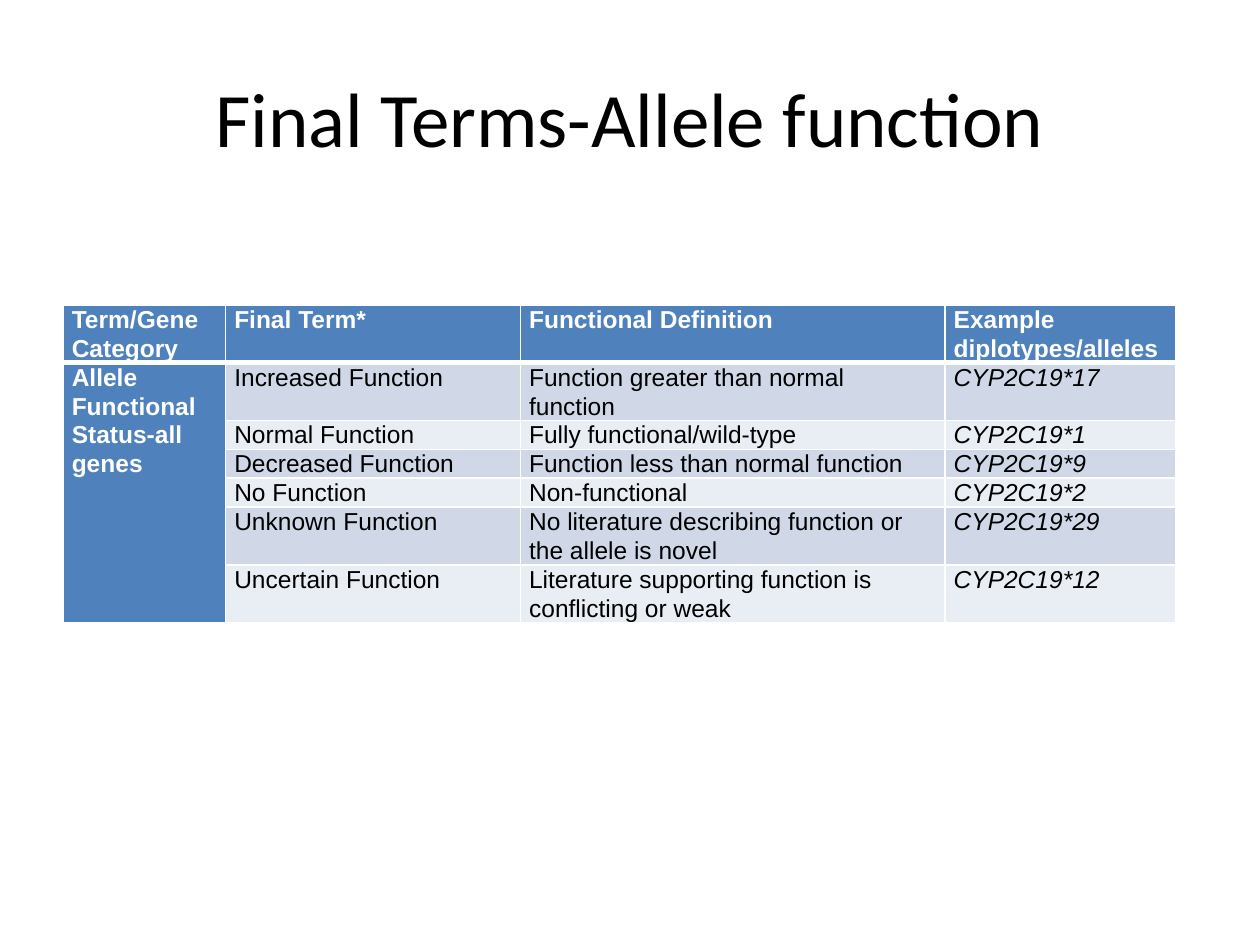
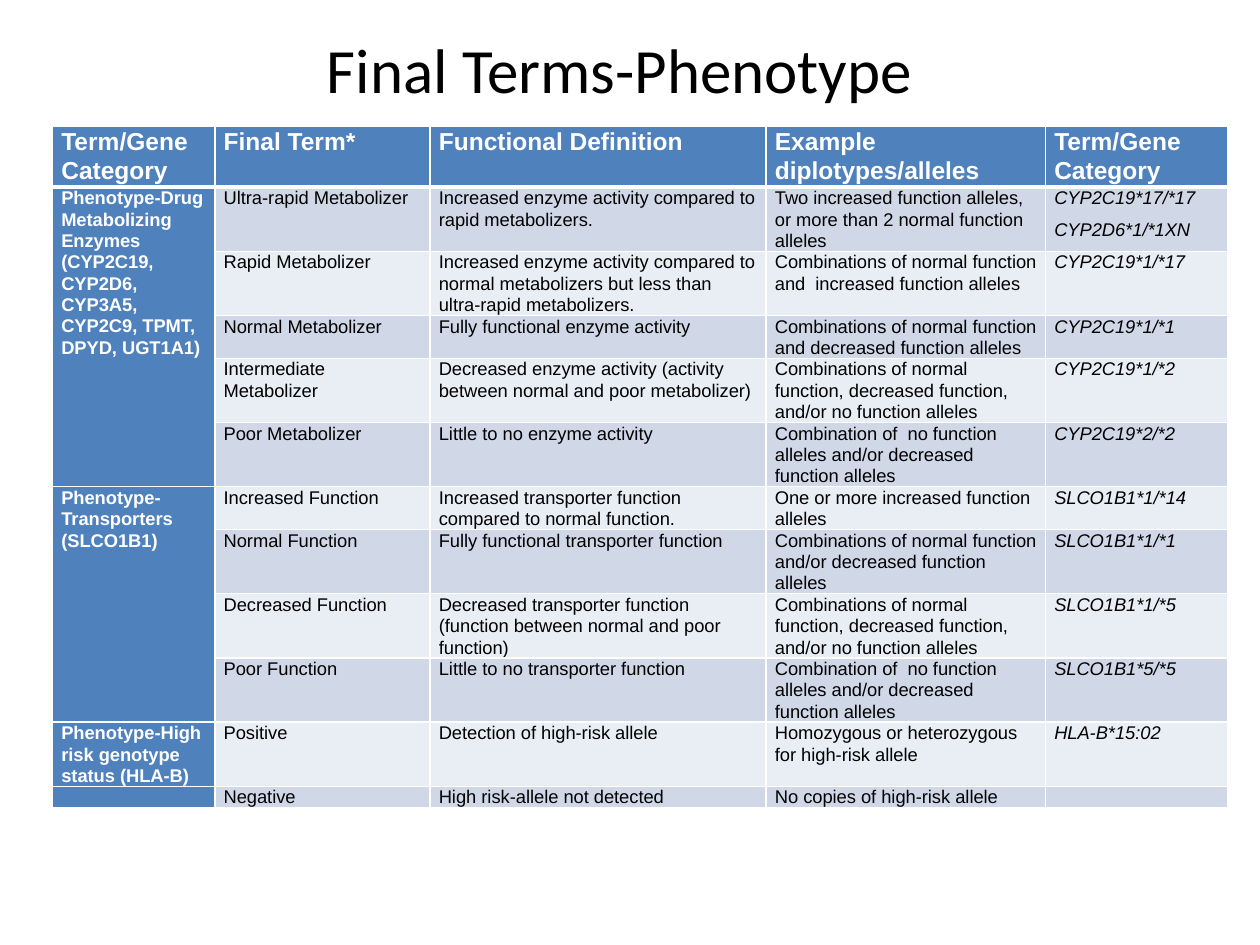
from lxml.etree import SubElement as Sub
from pptx import Presentation
from pptx.dml.color import RGBColor as Color
from pptx.enum.text import MSO_ANCHOR as Anchor, PP_ALIGN as Align
from pptx.oxml.ns import qn
from pptx.util import Inches, Pt

WIDE, HIGH = Inches(10), Inches(7.5)
LINE = Inches(0.16)
LEFT, RIGHT = Inches(0.07), Inches(0.06)
BLUE, WHITE, BLACK = "4F81BD", "FFFFFF", "000000"
BANDS = "D0D8E8", "E9EDF4"
HEADS = ["Term/Gene Category", "Final Term*", "Functional Definition",
         "Example diplotypes/alleles"]

ALLELES = [
    ("Allele Functional Status-all genes", [
        ("Increased Function", "Function greater than normal function", "CYP2C19*17"),
        ("Normal Function", "Fully functional/wild-type", "CYP2C19*1"),
        ("Decreased Function", "Function less than normal function", "CYP2C19*9"),
        ("No Function", "Non-functional", "CYP2C19*2"),
        ("Unknown Function", "No literature describing function or the allele is novel",
         "CYP2C19*29"),
        ("Uncertain Function", "Literature supporting function is conflicting or weak",
         "CYP2C19*12"),
    ]),
]

MIXED = "Combinations of normal function, decreased function, and/or no function alleles"
POOR = "Combination of  no function alleles and/or decreased function alleles"
TYPES = [
    ("Phenotype-Drug Metabolizing Enzymes "
     "(CYP2C19, CYP2D6, CYP3A5, CYP2C9, TPMT, DPYD, UGT1A1)", [
        ("Ultra-rapid Metabolizer",
         "Increased enzyme activity compared to rapid metabolizers.",
         "Two increased function alleles, or more than 2 normal function alleles",
         "CYP2C19*17/*17\nCYP2D6*1/*1XN"),
        ("Rapid Metabolizer",
         "Increased enzyme activity compared to normal metabolizers "
         "but less than ultra-rapid metabolizers.",
         "Combinations of normal function and  increased function alleles",
         "CYP2C19*1/*17"),
        ("Normal Metabolizer", "Fully functional enzyme activity",
         "Combinations of normal function and decreased function alleles",
         "CYP2C19*1/*1"),
        ("Intermediate Metabolizer",
         "Decreased enzyme activity (activity between normal and poor metabolizer)",
         MIXED, "CYP2C19*1/*2"),
        ("Poor Metabolizer", "Little to no enzyme activity", POOR, "CYP2C19*2/*2"),
    ]),
    ("Phenotype-Transporters (SLCO1B1)", [
        ("Increased Function",
         "Increased transporter function compared to normal function.",
         "One or more increased function alleles", "SLCO1B1*1/*14"),
        ("Normal Function", "Fully functional transporter function",
         "Combinations of normal function and/or decreased function alleles",
         "SLCO1B1*1/*1"),
        ("Decreased Function",
         "Decreased transporter function (function between normal and poor function)",
         MIXED, "SLCO1B1*1/*5"),
        ("Poor Function", "Little to no transporter function", POOR, "SLCO1B1*5/*5"),
    ]),
    ("Phenotype-High risk genotype status (HLA-B)", [
        ("Positive", "Detection of high-risk allele",
         "Homozygous or heterozygous for high-risk allele", "HLA-B*15:02"),
    ]),
    ("", [
        ("Negative", "High risk-allele not detected",
         "No copies of high-risk allele", ""),
    ]),
]


def paint(font, name, size, tint, bold=False, slant=False):
    font.name, font.size = name, Pt(size)
    font.bold, font.italic = bold, slant
    font.color.rgb = Color.from_string(tint)


def place(part, box):
    x, y, w, h = box
    part.left, part.top = int(x * WIDE), int(y * HIGH)
    part.width, part.height = int(w * WIDE), int(h * HIGH)


def add_title(slide, box, text, size):
    title = slide.shapes.title
    place(title, box)
    title.text = text
    title.text_frame.vertical_anchor = Anchor.MIDDLE
    par = title.text_frame.paragraphs[0]
    par.alignment = Align.CENTER
    paint(par.font, "Calibri", size, BLACK)


def edge(cell, widths):
    props = cell._tc.get_or_add_tcPr()
    for spot, (side, width) in enumerate(zip("LRTB", widths)):
        line = Sub(props, qn(f"a:ln{side}"), w=str(Pt(width)))
        Sub(Sub(line, qn("a:solidFill")), qn("a:srgbClr"), val=WHITE)
        props.insert(spot, line)


def fill_cell(cell, text, back, size, tint, bold=False, slant=False):
    cell.text = text
    cell.fill.solid()
    cell.fill.fore_color.rgb = Color.from_string(back)
    cell.margin_left, cell.margin_right = LEFT, RIGHT
    cell.margin_top = cell.margin_bottom = 0
    for par in cell.text_frame.paragraphs:
        par.line_spacing, par.space_before = 1.05, Pt(6)
        paint(par.font, "Arial", size, tint, bold, slant)


def add_grid(slide, box, heads, groups, parts, lines, size):
    frame = slide.shapes.add_table(len(lines), len(heads), 0, 0, WIDE, HIGH)
    grid = frame.table
    grid.first_col = True
    for col, part in zip(grid.columns, parts):
        col.width = int(box[2] * WIDE * part / sum(parts))
    for row, count in zip(grid.rows, lines):
        row.height = LINE * count
    place(frame, box)
    for c, text in enumerate(heads):
        fill_cell(grid.cell(0, c), text, BLUE, 14, WHITE, bold=True)
    r = 1
    for label, rows in groups:
        first = grid.cell(r, 0)
        if len(rows) > 1:
            first.merge(grid.cell(r + len(rows) - 1, 0))
        fill_cell(first, label, BLUE, size, WHITE, bold=True)
        for row in rows:
            for c, text in enumerate(row, 1):
                fill_cell(grid.cell(r, c), text, BANDS[(r - 1) % 2], size, BLACK,
                          slant=c == len(row))
            r += 1
    for r in range(len(lines)):
        for c in range(len(heads)):
            edge(grid.cell(r, c), (1, 1, 3 if r == 1 else 1, 1 if r else 3))


def main():
    deck = Presentation()
    deck.slide_width, deck.slide_height = WIDE, HIGH
    plain = deck.slide_layouts[5]

    slide = deck.slides.add_slide(plain)
    add_title(slide, (0.05, 0.04, 0.9, 0.167), "Final Terms-Allele function", 44)
    add_grid(slide, (0.05, 0.3225, 0.883, 0.327), HEADS, ALLELES,
             (129, 234, 337, 183), (2, 1, 1, 1, 1, 2, 2), 14)

    slide = deck.slides.add_slide(plain)
    add_title(slide, (0.0417, -0.011, 0.9, 0.167), "Final Terms-Phenotype", 36)
    add_grid(slide, (0.0417, 0.134, 0.933, 0.801), HEADS + HEADS[:1], TYPES,
             (129, 171, 267, 222, 145), (3, 3, 3, 2, 3, 3, 2, 2, 3, 3, 3, 1), 10.5)

    deck.save("out.pptx")


if __name__ == "__main__":
    main()
